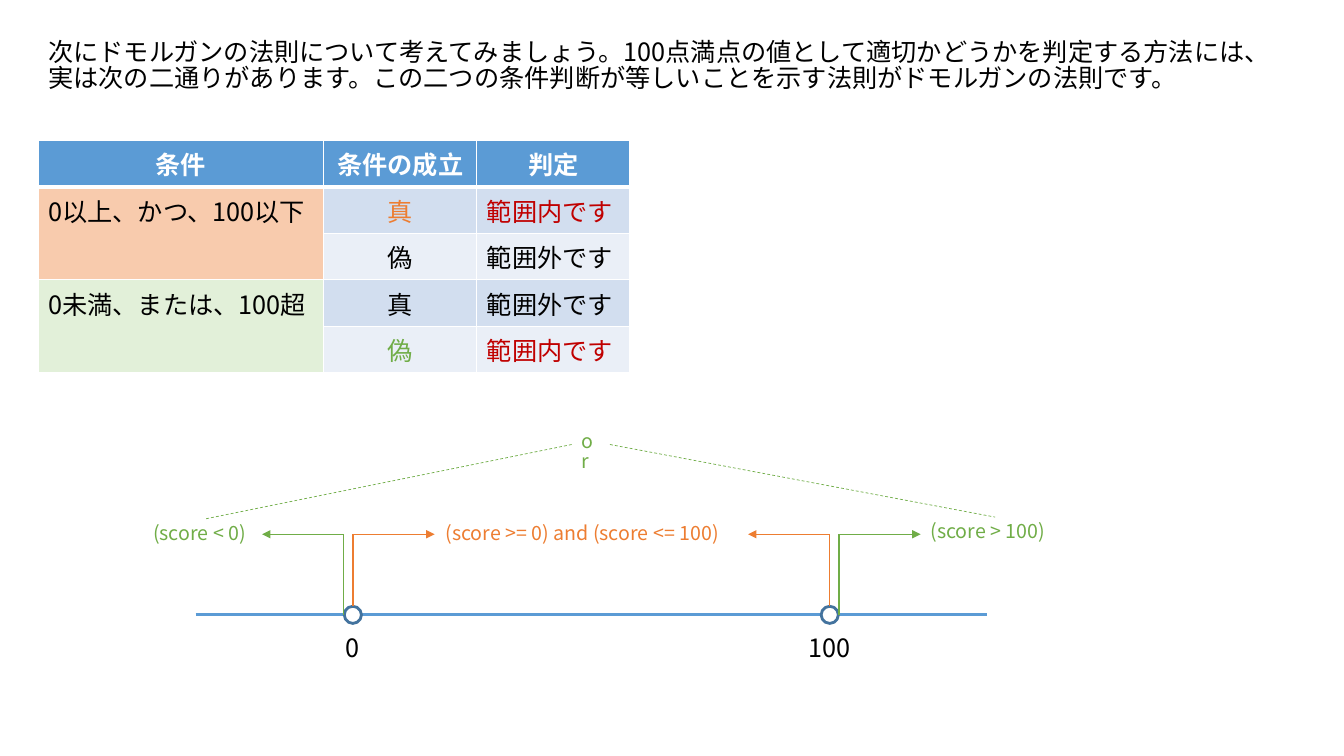
from dataclasses import dataclass

from lxml.etree import SubElement
from pptx import Presentation
from pptx.dml.color import RGBColor
from pptx.enum.dml import MSO_LINE
from pptx.enum.shapes import MSO_CONNECTOR, MSO_SHAPE
from pptx.enum.text import MSO_AUTO_SIZE, PP_ALIGN
from pptx.oxml.ns import qn
from pptx.util import Inches, Pt


@dataclass(frozen=True)
class Theme:
    """Colours, font and type sizes of the slide."""
    font: str = "Noto Sans CJK JP"
    body: int = 18
    small: int = 14
    tight: float = 0.85
    black: str = "000000"
    white: str = "FFFFFF"
    blue: str = "5B9BD5"
    navy: str = "43739E"
    orange: str = "ED7D31"
    green: str = "70AD47"
    red: str = "C00000"
    peach: str = "F8CBAD"
    mint: str = "E2F0D9"
    bands: tuple = ("D2DEEF", "EAEFF7")


class Canvas:
    """Draws styled elements on the current slide."""

    def __init__(self, slide, theme):
        """Keep the slide and its theme."""
        self.shapes = slide.shapes
        self.theme = theme

    def label(self, para, text, size, color, bold=False):
        """Add one styled run to a paragraph."""
        run = para.add_run()
        run.text = text
        font = run.font
        font.name, font.size, font.bold = self.theme.font, Pt(size), bold
        font.color.rgb = RGBColor.from_string(color)
        SubElement(font._element, qn("a:ea")).set("typeface", self.theme.font)

    def text(self, x, y, w, h, text, size, color, wrap=False):
        """Add a text box."""
        box = self.shapes.add_textbox(Inches(x), Inches(y), Inches(w), Inches(h))
        frame = box.text_frame
        frame.word_wrap = wrap
        frame.auto_size = MSO_AUTO_SIZE.NONE
        para = frame.paragraphs[0]
        para.line_spacing = self.theme.tight
        self.label(para, text, size, color)
        return box

    def ring(self, x, y, size):
        """Add an open circle centred on a point."""
        ring = self.shapes.add_shape(
            MSO_SHAPE.OVAL, Inches(x - size / 2), Inches(y - size / 2),
            Inches(size), Inches(size))
        ring.shadow.inherit = False
        ring.fill.background()
        ring.line.color.rgb = RGBColor.from_string(self.theme.navy)
        ring.line.width = Pt(2)

    def line(self, start, end, color, width=1, arrow=False, dash=False):
        """Add a straight line, with an arrowhead or dashes on request."""
        line = self.shapes.add_connector(
            MSO_CONNECTOR.STRAIGHT, *map(Inches, start + end))
        line.line.color.rgb = RGBColor.from_string(color)
        line.line.width = Pt(width)
        if dash:
            line.line.dash_style = MSO_LINE.DASH
        props = line._element.spPr
        if arrow:
            SubElement(props.get_or_add_ln(), qn("a:tailEnd")).set("type", "triangle")
        SubElement(props, qn("a:effectLst"))
        return line

    def cell(self, cell, text, fill, color, center=False, bold=False, base=1):
        """Fill a table cell and give it white borders."""
        props = cell._tc.get_or_add_tcPr()
        for side, width in (("L", 1), ("R", 1), ("T", 1), ("B", base)):
            edge = SubElement(props, qn(f"a:ln{side}"), w=str(Pt(width)))
            solid = SubElement(edge, qn("a:solidFill"))
            SubElement(solid, qn("a:srgbClr"), val=self.theme.white)
        cell.fill.solid()
        cell.fill.fore_color.rgb = RGBColor.from_string(fill)
        para = cell.text_frame.paragraphs[0]
        para.alignment = PP_ALIGN.CENTER if center else PP_ALIGN.LEFT
        if text:
            self.label(para, text, self.theme.body, color, bold)

    def table(self, x, y, cols, row, heads, groups):
        """Add a table whose first column spans each group of rows."""
        look = self.theme
        count = 1 + sum(len(rows) for _, _, rows in groups)
        grid = self.shapes.add_table(
            count, len(cols), Inches(x), Inches(y),
            Inches(sum(cols)), Inches(row * count)).table
        for col, width in zip(grid.columns, cols):
            col.width = Inches(width)
        for line in grid.rows:
            line.height = Inches(row)
        for col, head in enumerate(heads):
            self.cell(grid.cell(0, col), head, look.blue, look.white, True, True, 3)
        top = 1
        for label, tint, rows in groups:
            grid.cell(top, 0).merge(grid.cell(top + len(rows) - 1, 0))
            for step, (truth, hue, result, tone) in enumerate(rows):
                band = look.bands[step % 2]
                self.cell(grid.cell(top + step, 0), "" if step else label, tint, look.black)
                self.cell(grid.cell(top + step, 1), truth, band, hue, True)
                self.cell(grid.cell(top + step, 2), result, band, tone)
            top += len(rows)


def draw_axis(art):
    """Draw the number line with its bounds and direction arrows."""
    look = art.theme
    base, level, size, gap = 6.1, 5.3, 0.17, 0.09
    low, high = 3.5, 8.23
    for left, right in ((1.94, low - gap), (low + gap, high - gap), (high + gap, 9.79)):
        art.line((left, base), (right, base), look.blue, 2)
    for x, side, name, width in ((low, 1, "0", 0.34), (high, -1, "100", 0.62)):
        art.ring(x, base, size)
        art.text(x - width / 2, 6.27, width, 0.4, name, look.body, look.black)
        edge = x - side * gap
        for stem, foot, way, color in ((x, base - gap, side, look.orange),
                                       (edge, base, -side, look.green)):
            art.line((stem, foot), (stem, level), color)
            art.line((stem, level), (stem + way * 0.81, level), color, arrow=True)


def draw_terms(art):
    """Place the conditions and tie the outer two to their operator."""
    look = art.theme
    art.text(4.32, 5.15, 3.17, 0.34, "(score >= 0) and (score <= 100)",
             look.small, look.orange)
    link = art.text(5.67, 4.24, 0.38, 0.34, "or", look.small, look.green, True)
    for x, y, width, term, side in ((1.42, 5.15, 1.21, "(score < 0)", 1),
                                    (9.13, 5.13, 1.48, "(score > 100)", 3)):
        box = art.text(x, y, width, 0.34, term, look.small, look.green)
        tie = art.line((5.86, 4.41), (x + width / 2, y), look.green, 0.5, dash=True)
        tie.begin_connect(link, side)
        tie.end_connect(box, 0)


def main():
    """Build and save the slide."""
    deck = Presentation()
    deck.slide_width, deck.slide_height = Inches(13.33), Inches(7.5)
    look = Theme()
    art = Canvas(deck.slides.add_slide(deck.slide_layouts[6]), look)
    art.text(0.38, 0.36, 12.52, 1.01,
             "次にドモルガンの法則について考えてみましょう。100点満点の値として適切かどうかを"
             "判定する方法には、実は次の二通りがあります。この二つの条件判断が等しいことを示す"
             "法則がドモルガンの法則です。", look.body, look.black, True)
    draw_axis(art)
    draw_terms(art)
    inside, outside = ("範囲内です", look.red), ("範囲外です", look.black)
    art.table(0.38, 1.39, (2.83, 1.52, 1.52), 0.41, ("条件", "条件の成立", "判定"), (
        ("0以上、かつ、100以下", look.peach,
         (("真", look.orange, *inside), ("偽", look.black, *outside))),
        ("0未満、または、100超", look.mint,
         (("真", look.black, *outside), ("偽", look.green, *inside)))))
    deck.save("out.pptx")


if __name__ == "__main__":
    main()
